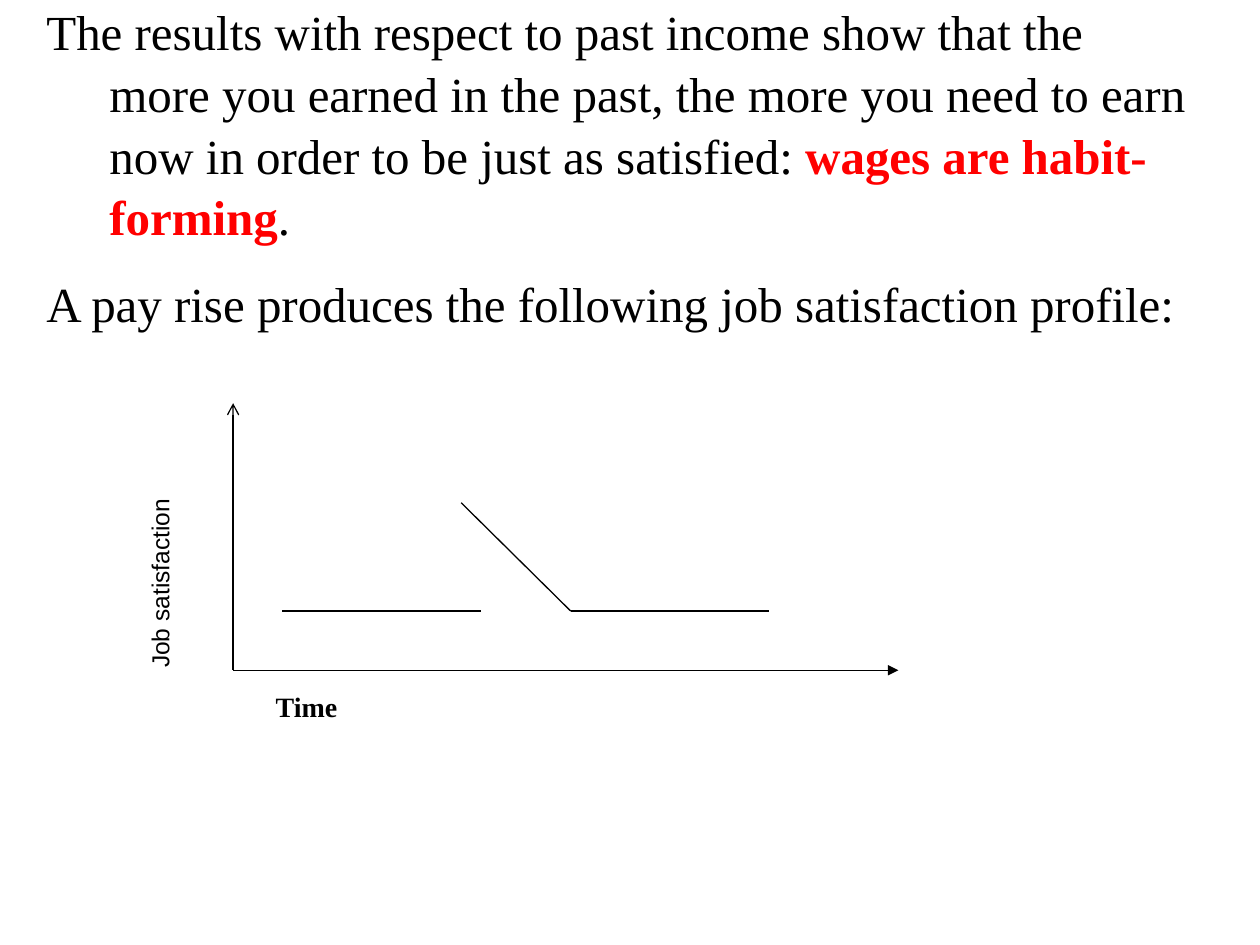
"""Build a slide on habit-forming wages with a job satisfaction profile."""
from dataclasses import dataclass

from lxml import etree
from pptx import Presentation
from pptx.dml.color import RGBColor
from pptx.enum.shapes import MSO_CONNECTOR
from pptx.oxml.ns import qn
from pptx.util import Inches, Pt

STRAIGHT = MSO_CONNECTOR.STRAIGHT


@dataclass(frozen=True)
class Theme:
    """Colours, fonts and sizes of the slide."""
    ink: RGBColor = RGBColor(0, 0, 0)
    accent: RGBColor = RGBColor(255, 0, 0)
    serif: str = "Times New Roman"
    sans: str = "Arial"
    body: float = 28
    time: float = 16
    axis: float = 14
    line: float = 0.75


THEME = Theme()


def add_box(slide, left, top, width, height, inset_top=0.05):
    """Add a wrapping text box and return its shape."""
    sp = slide.shapes.add_textbox(*map(Inches, (left, top, width, height)))
    sp.text_frame.word_wrap = True
    sp.text_frame.margin_top = Inches(inset_top)
    return sp


def add_run(p, text, size, font=THEME.serif, color=THEME.ink, bold=False):
    """Add one formatted run to a paragraph."""
    r = p.add_run()
    r.text = text
    r.font.size = Pt(size)
    r.font.name = font
    r.font.bold = bold
    r.font.color.rgb = color


def format_hanging(p, space_before=0):
    """Give a body paragraph its hanging indent and spacing."""
    p.line_spacing = 1.05
    p.space_before = Pt(space_before)
    pPr = p._p.get_or_add_pPr()
    pPr.set("marL", str(Inches(0.5)))
    pPr.set("indent", str(Inches(-0.5)))


def add_line(slide, start, end, head=None, tail=None):
    """Add a thin straight line with optional arrowheads."""
    s = slide.shapes.add_connector(STRAIGHT, *map(Inches, start + end))
    s.line.color.rgb = THEME.ink
    s.line.width = Pt(THEME.line)
    ln = s.line._get_or_add_ln()
    for tag, kind in (("a:headEnd", head), ("a:tailEnd", tail)):
        if kind:
            etree.SubElement(ln, qn(tag)).set("type", kind)
    etree.SubElement(s._element.spPr, qn("a:effectLst"))


def add_body(slide):
    """Add the two statements at the top."""
    tf = add_box(slide, 0.27, -0.66, 9.29, 3.84, 0.65).text_frame
    p = tf.paragraphs[0]
    format_hanging(p)
    add_run(p, "The results with respect to past income show that the more "
               "you earned in the past, the more you need to earn now in "
               "order to be just as satisfied: ", THEME.body)
    add_run(p, "wages are habit-forming", THEME.body,
            color=THEME.accent, bold=True)
    add_run(p, ".", THEME.body)
    p = tf.add_paragraph()
    format_hanging(p, THEME.body / 2)
    add_run(p, "A pay rise produces the following job satisfaction profile:",
            THEME.body)


def add_profile(slide):
    """Add the axes and the satisfaction profile over time."""
    origin, level = (1.85, 5.32), 4.85
    landing = (4.53, level)
    add_line(slide, (1.85, 3.2), origin, head="arrow")
    add_line(slide, origin, (7.13, 5.32), tail="triangle")
    add_line(slide, (2.24, level), (3.82, level))
    add_line(slide, (3.66, 3.99), landing)
    add_line(slide, landing, (6.1, level))


def add_axis_labels(slide):
    """Add the labels of the two axes."""
    sp = add_box(slide, 1.1, 3.59, 0.43, 1.81)
    sp.rotation = 180
    sp.text_frame._txBody.bodyPr.set("vert", "eaVert")
    p = sp.text_frame.paragraphs[0]
    p.space_before = Pt(THEME.axis / 2)
    add_run(p, "Job satisfaction", THEME.axis, THEME.sans)
    sp = add_box(slide, 2.09, 4.3, 6.93, 1.89, 1.17)
    add_run(sp.text_frame.paragraphs[0], "Time", THEME.time, bold=True)


def main():
    """Build and save the slide."""
    prs = Presentation()
    prs.slide_width, prs.slide_height = Inches(10), Inches(7.5)
    slide = prs.slides.add_slide(prs.slide_layouts[6])
    add_body(slide)
    add_profile(slide)
    add_axis_labels(slide)
    prs.save("out.pptx")


if __name__ == "__main__":
    main()
